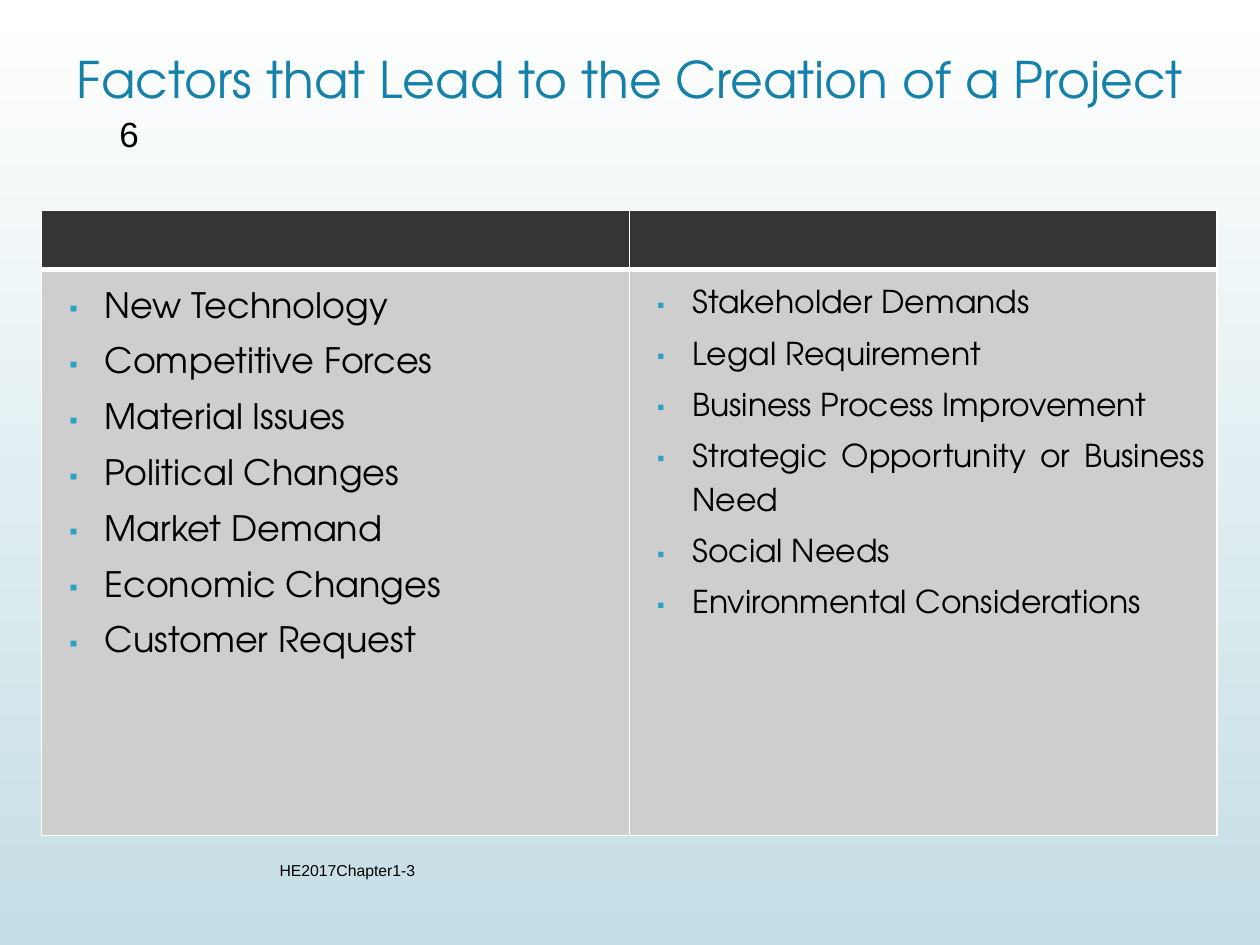
from pptx import Presentation
from pptx.dml.color import RGBColor
from pptx.enum.text import MSO_ANCHOR, PP_ALIGN
from pptx.oxml import parse_xml
from pptx.oxml.ns import nsdecls
from pptx.util import Inches, Pt

WHITE = RGBColor(0xFF, 0xFF, 0xFF)
BLACK = RGBColor(0, 0, 0)
MIST = RGBColor(0xC5, 0xDE, 0xE5)
BLUE = RGBColor(0x15, 0x81, 0xAA)
TEAL = RGBColor(0x2D, 0xA2, 0xBF)
DARK = RGBColor(0x35, 0x35, 0x35)
GREY = RGBColor(0xCE, 0xCE, 0xCE)
SANS = "Arial"
ROUND = "TeX Gyre Adventor"

LEFT = ["New Technology", "Competitive Forces", "Material Issues",
        "Political Changes", "Market Demand", "Economic Changes",
        "Customer Request"]
RIGHT = ["Stakeholder Demands", "Legal Requirement",
         "Business Process Improvement",
         "Strategic Opportunity or Business Need", "Social Needs",
         "Environmental Considerations"]


def style(para, size, face, color):
    for run in para.runs:
        run.font.size = Pt(size)
        run.font.name = face
        run.font.color.rgb = color


def place(shape, box):
    shape.left, shape.top, shape.width, shape.height = map(Inches, box)


def add_back(slide):
    fill = slide.background.fill
    fill.gradient()
    fill.gradient_angle = 270
    for stop, color, pos in zip(fill.gradient_stops, (WHITE, MIST), (0, 1)):
        stop.color.rgb = color
        stop.position = pos


def add_title(slide, box, text):
    title = slide.shapes.title
    place(title, box)
    frame = title.text_frame
    frame.text = text
    frame.word_wrap = True
    frame.vertical_anchor = MSO_ANCHOR.TOP
    para = frame.paragraphs[0]
    para.alignment = PP_ALIGN.CENTER
    style(para, 28.8, ROUND, BLUE)


def add_label(slide, box, text, size, align):
    frame = slide.shapes.add_textbox(*map(Inches, box)).text_frame
    frame.text = text
    frame.word_wrap = True
    frame.vertical_anchor = MSO_ANCHOR.MIDDLE
    para = frame.paragraphs[0]
    para.alignment = align
    style(para, size, SANS, BLACK)


def add_edges(cell, widths):
    props = cell._tc.get_or_add_tcPr()
    for index, (side, width) in enumerate(widths.items()):
        props.insert(index, parse_xml(
            f'<a:ln{side} {nsdecls("a")} w="{Pt(width)}"><a:solidFill>'
            f'<a:srgbClr val="{WHITE}"/></a:solidFill></a:ln{side}>'))


def add_bullet(para):
    props = para._p.get_or_add_pPr()
    props.set("marL", str(Inches(0.4)))
    props.set("indent", str(Inches(-0.28)))
    for tag in (f'buClr {nsdecls("a")}><a:srgbClr val="{TEAL}"/></a:buClr',
                f'buSzPct {nsdecls("a")} val="68000"/',
                f'buFont {nsdecls("a")} typeface="{SANS}"/',
                f'buChar {nsdecls("a")} char="▪"/'):
        props.append(parse_xml(f"<a:{tag}>"))


def fill_list(cell, items, size):
    frame = cell.text_frame
    frame.text = "\n".join(items)
    for index, para in enumerate(frame.paragraphs):
        para.alignment = PP_ALIGN.JUSTIFY
        para.line_spacing = 1.5
        para.space_before = Pt(4 if index else 0)
        add_bullet(para)
        style(para, size, ROUND, BLACK)


def add_grid(slide, box, lists):
    table = slide.shapes.add_table(2, len(lists), *map(Inches, box)).table
    head = Inches(0.47)
    table.rows[0].height = head
    table.rows[1].height = Inches(box[3]) - head
    for col, (items, size) in enumerate(lists):
        top, body = table.cell(0, col), table.cell(1, col)
        for cell, color in ((top, DARK), (body, GREY)):
            cell.fill.solid()
            cell.fill.fore_color.rgb = color
        add_edges(top, {"L": 1, "R": 1, "T": 1, "B": 3})
        add_edges(body, {"L": 1, "R": 1, "T": 3, "B": 1})
        fill_list(body, items, size)


def main():
    deck = Presentation()
    deck.slide_width, deck.slide_height = Inches(10), Inches(7.5)
    slide = deck.slides.add_slide(deck.slide_layouts[5])
    add_back(slide)
    add_title(slide, (0.5, 0.33, 9, 0.83),
              "Factors that Lead to the Creation of a Project")
    add_grid(slide, (0.33, 1.67, 9.33, 4.96), [(LEFT, 20), (RIGHT, 18)])
    add_label(slide, (2.12, 6.71, 6.25, 0.4), "HE2017Chapter1-3", 9,
              PP_ALIGN.LEFT)
    add_label(slide, (0.56, 0.86, 0.64, 0.4), "6", 20, PP_ALIGN.RIGHT)
    deck.save("out.pptx")


if __name__ == "__main__":
    main()
